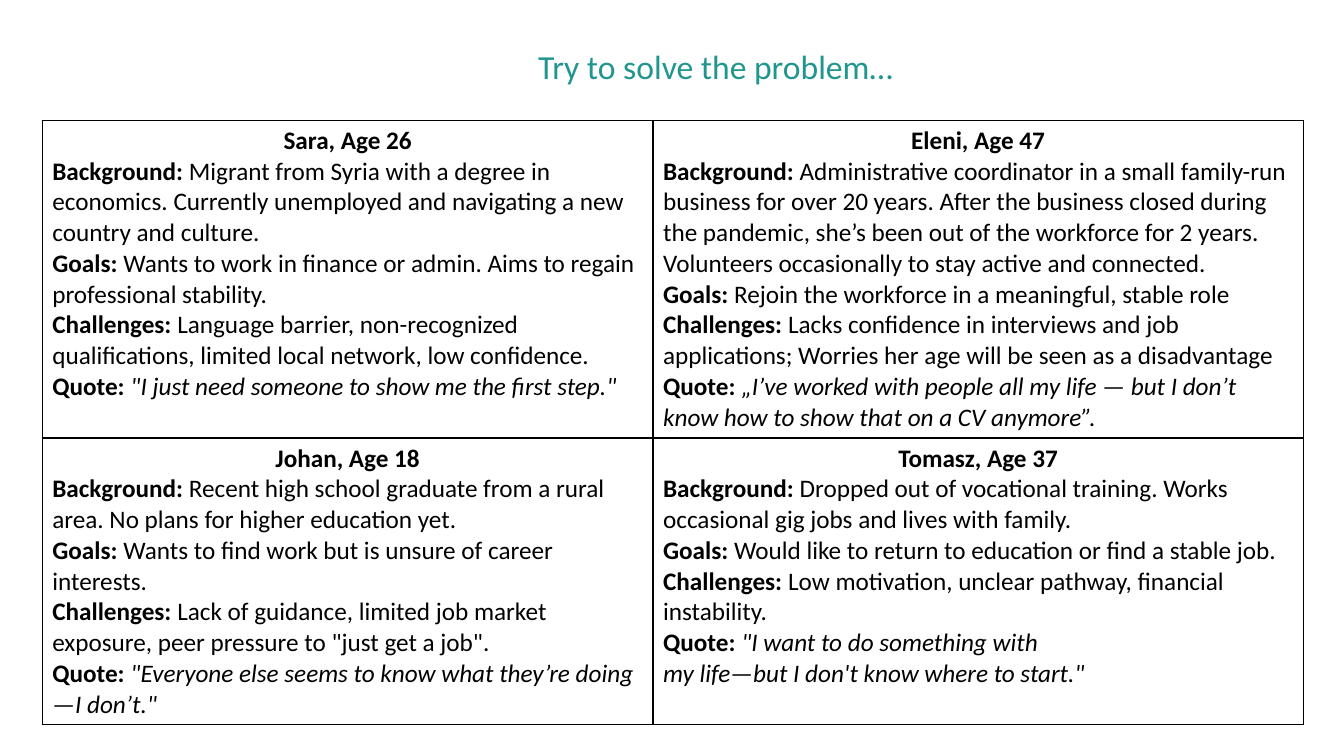
"""Build a slide with a table of four job-seeker personas."""
from dataclasses import dataclass
from itertools import product

from lxml.etree import SubElement
from pptx import Presentation
from pptx.dml.color import RGBColor
from pptx.enum.text import MSO_ANCHOR, PP_ALIGN
from pptx.oxml.ns import qn
from pptx.slide import Slide
from pptx.table import _Cell as Cell
from pptx.text.text import _Paragraph as Paragraph
from pptx.util import Pt


@dataclass(frozen=True)
class Theme:
    font: str = "Calibri"
    title_size: float = 24
    body_size: float = 18
    title_color: str = "21968F"
    ink: str = "000000"
    border_width: float = 1


@dataclass(frozen=True)
class Persona:
    heading: str
    background: str
    goals: str
    challenges: str
    quote: str


THEME = Theme()
COLUMN_WIDTHS = (436.3, 464.4)
ROW_HEIGHTS = (227, 204.5)
PERSONAS = (
    Persona(
        "Sara, Age 26",
        "Migrant from Syria with a degree in economics. Currently unemployed "
        "and navigating a new country and culture.",
        "Wants to work in finance or admin. Aims to regain professional stability.",
        "Language barrier, non-recognized qualifications, limited local network, "
        "low confidence.",
        '"I just need someone to show me the first step."',
    ),
    Persona(
        "Eleni, Age 47",
        "Administrative coordinator in a small family-run business for over 20 years. "
        "After the business closed during the pandemic, she’s been out of the workforce "
        "for 2 years. Volunteers occasionally to stay active and connected.",
        "Rejoin the workforce in a meaningful, stable role",
        "Lacks confidence in interviews and job applications; Worries her age will be "
        "seen as a disadvantage",
        "„I’ve worked with people all my life — but I don’t know how to show that "
        "on a CV anymore”.",
    ),
    Persona(
        "Johan, Age 18",
        "Recent high school graduate from a rural area. No plans for higher education yet.",
        "Wants to find work but is unsure of career interests.",
        "Lack of guidance, limited job market exposure, peer pressure to "
        '"just get a job".',
        '"Everyone else seems to know what they’re doing—I don’t."',
    ),
    Persona(
        "Tomasz, Age 37",
        "Dropped out of vocational training. Works occasional gig jobs and lives with family.",
        "Would like to return to education or find a stable job.",
        "Low motivation, unclear pathway, financial instability.",
        "\"I want to do something with\nmy life—but I don't know where to start.\"",
    ),
)


def add_text(paragraph: Paragraph, text: str, size: float, color: str,
             bold: bool = False, italic: bool = False) -> None:
    """Append one formatted run to a paragraph."""
    run = paragraph.add_run()
    run.text = text
    font = run.font
    font.name, font.size = THEME.font, Pt(size)
    font.bold, font.italic = bold, italic
    font.color.rgb = RGBColor.from_string(color)


def add_body(paragraph: Paragraph, text: str, bold: bool = False,
             italic: bool = False) -> None:
    """Append a run in the table's body style."""
    add_text(paragraph, text, THEME.body_size, THEME.ink, bold, italic)


def draw_borders(cell: Cell) -> None:
    """Outline all four sides of a cell and leave it unfilled."""
    properties = cell._tc.get_or_add_tcPr()
    for side in ("a:lnL", "a:lnR", "a:lnT", "a:lnB"):
        line = SubElement(properties, qn(side), w=str(Pt(THEME.border_width)))
        fill = SubElement(line, qn("a:solidFill"))
        SubElement(fill, qn("a:srgbClr"), val=THEME.ink)
    cell.fill.background()


def fill_persona(cell: Cell, persona: Persona) -> None:
    """Write one persona into its cell."""
    heading = cell.text_frame.paragraphs[0]
    heading.alignment = PP_ALIGN.CENTER
    add_body(heading, persona.heading, bold=True)
    profile = cell.text_frame.add_paragraph()
    for label, detail in (("Background:", persona.background),
                          ("Goals:", persona.goals),
                          ("Challenges:", persona.challenges)):
        add_body(profile, label, bold=True)
        add_body(profile, f" {detail}")
        profile.add_line_break()
    add_body(profile, "Quote: ", bold=True)
    opening, *continuation = persona.quote.split("\n")
    add_body(profile, opening, italic=True)
    for sentence in continuation:
        add_body(cell.text_frame.add_paragraph(), sentence, italic=True)


def add_title(slide: Slide, text: str) -> None:
    """Place the slide heading."""
    title = slide.shapes.add_textbox(Pt(377.3), Pt(29.5), Pt(295.2), Pt(41)).text_frame
    title.word_wrap = True
    title.vertical_anchor = MSO_ANCHOR.TOP
    add_text(title.paragraphs[0], text, THEME.title_size, THEME.title_color)


def add_personas(slide: Slide) -> None:
    """Lay the personas out in a two-by-two table."""
    grid = slide.shapes.add_table(
        len(ROW_HEIGHTS), len(COLUMN_WIDTHS), Pt(30.2), Pt(85.9),
        Pt(sum(COLUMN_WIDTHS)), Pt(sum(ROW_HEIGHTS))).table
    grid.first_row = grid.horz_banding = False
    for column, width in zip(grid.columns, COLUMN_WIDTHS):
        column.width = Pt(width)
    for row, height in zip(grid.rows, ROW_HEIGHTS):
        row.height = Pt(height)
    places = product(range(len(ROW_HEIGHTS)), range(len(COLUMN_WIDTHS)))
    for (row_index, column_index), persona in zip(places, PERSONAS):
        cell = grid.cell(row_index, column_index)
        draw_borders(cell)
        fill_persona(cell, persona)


def main() -> None:
    """Build and save the presentation."""
    presentation = Presentation()
    presentation.slide_width, presentation.slide_height = Pt(960), Pt(540)
    slide = presentation.slides.add_slide(presentation.slide_layouts[6])
    add_title(slide, "Try to solve the problem…")
    add_personas(slide)
    presentation.save("out.pptx")


if __name__ == "__main__":
    main()
